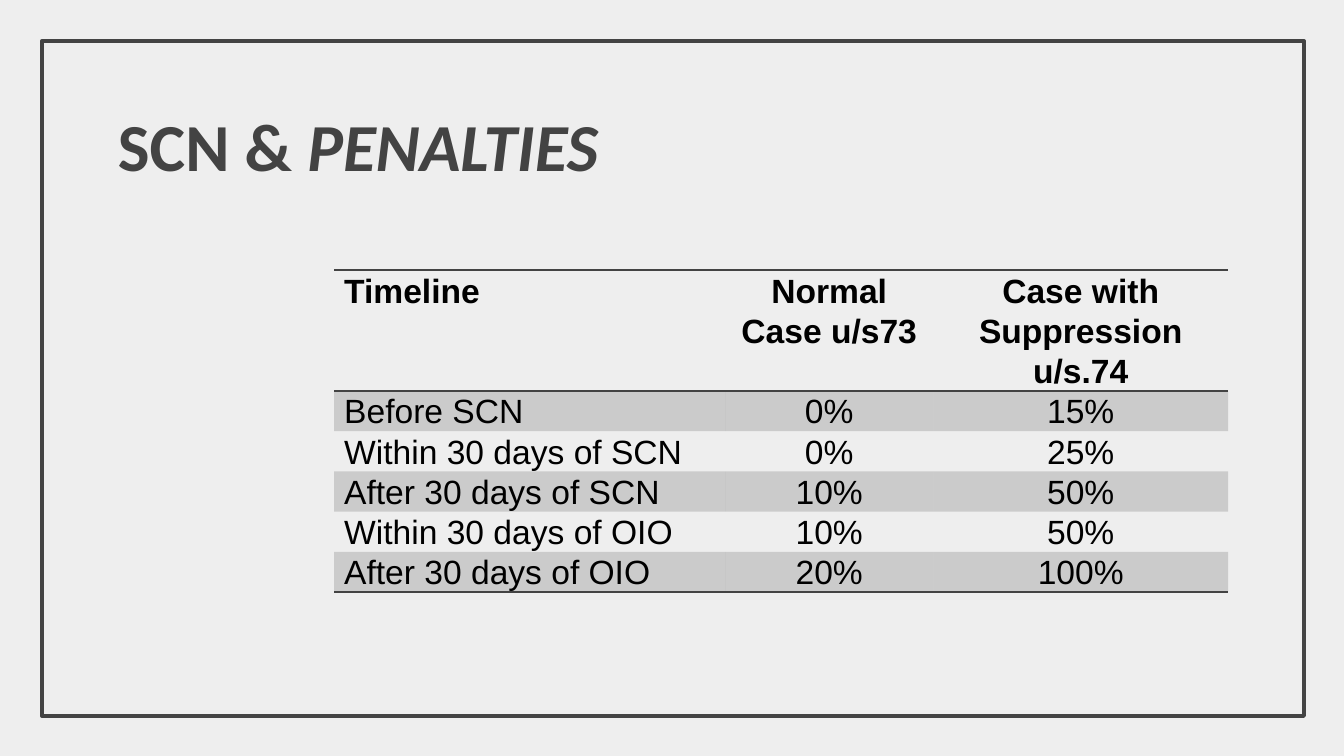
from dataclasses import dataclass

from lxml.etree import SubElement
from pptx import Presentation
from pptx.dml.color import RGBColor as RGB
from pptx.enum.shapes import MSO_SHAPE as Preset
from pptx.enum.text import MSO_ANCHOR as Anchor, PP_ALIGN as Align
from pptx.oxml.ns import qn
from pptx.util import Pt


@dataclass(frozen=True)
class Theme:
    paper: str = "EEEEEE"
    slate: str = "434343"
    ink: str = "000000"
    title_font: str = "Calibri"
    table_font: str = "Arial"
    title_size: float = 36
    table_size: float = 18


theme = Theme()


def write(paragraph, text, *, font, size, color, bold=False, italic=False, align=Align.LEFT):
    paragraph.alignment = align
    run = paragraph.add_run()
    run.text = text
    run.font.name = font
    run.font.size = Pt(size)
    run.font.bold = bold
    run.font.italic = italic
    run.font.color.rgb = RGB.from_string(color)


def rule(cell, side):
    line = SubElement(cell._tc.get_or_add_tcPr(), qn(f"a:{side}"), w=str(Pt(1)))
    fill = SubElement(line, qn("a:solidFill"))
    SubElement(fill, qn("a:srgbClr"), val=theme.slate)


deck = Presentation()
deck.slide_width, deck.slide_height = Pt(720), Pt(405)
slide = deck.slides.add_slide(deck.slide_layouts[5])
slide.background.fill.solid()
slide.background.fill.fore_color.rgb = RGB.from_string(theme.paper)

frame = slide.shapes.add_shape(Preset.RECTANGLE, Pt(22.5), Pt(22), Pt(676), Pt(361.5))
frame.shadow.inherit = False
frame.fill.background()
frame.line.color.rgb = RGB.from_string(theme.slate)
frame.line.width = Pt(2.25)

title = slide.shapes.title
title.left, title.top, title.width, title.height = Pt(56), Pt(48.5), Pt(608.5), Pt(58)
heading = title.text_frame
heading.margin_left = heading.margin_right = heading.margin_top = heading.margin_bottom = Pt(7.2)
heading.vertical_anchor = Anchor.MIDDLE
for words, slanted in (("SCN & ", False), ("PENALTIES", True)):
    write(heading.paragraphs[0], words, font=theme.title_font, size=theme.title_size,
          color=theme.slate, bold=True, italic=slanted)

penalties = [
    ("Timeline", "Normal Case u/s73", "Case with Suppression u/s.74"),
    ("Before SCN", "0%", "15%"),
    ("Within 30 days of SCN", "0%", "25%"),
    ("After 30 days of SCN", "10%", "50%"),
    ("Within 30 days of OIO", "10%", "50%"),
    ("After 30 days of OIO", "20%", "100%"),
]
column_widths = (209.5, 111.5, 158)
row_height = 21.5
header_height = 3 * row_height
last = len(penalties) - 1

grid = slide.shapes.add_table(len(penalties), len(column_widths), Pt(179), Pt(144.7),
                              Pt(sum(column_widths)), Pt(header_height + last * row_height)).table
grid._tbl.tblPr.find(qn("a:tableStyleId")).text = "{2D5ABB26-0587-4C30-8999-92F81FD0307C}"
grid.horz_banding = False
for column, width in zip(grid.columns, column_widths):
    column.width = Pt(width)

for r, entries in enumerate(penalties):
    grid.rows[r].height = Pt(row_height if r else header_height)
    for c, entry in enumerate(entries):
        cell = grid.cell(r, c)
        cell.margin_left = cell.margin_right = Pt(5.4)
        cell.margin_top = cell.margin_bottom = 0
        if r == 0:
            rule(cell, "lnT")
        if r in (0, last):
            rule(cell, "lnB")
        if r % 2:
            cell.fill.solid()
            cell.fill.fore_color.rgb = RGB.from_string(theme.slate)
            tint = cell._tc.tcPr.find(qn("a:solidFill")).find(qn("a:srgbClr"))
            SubElement(tint, qn("a:alpha"), val="20000")
        else:
            cell.fill.background()
        paragraph = cell.text_frame.paragraphs[0]
        paragraph.line_spacing = 1.07
        paragraph.space_after = Pt(8)
        write(paragraph, entry, font=theme.table_font, size=theme.table_size, color=theme.ink,
              bold=r == 0, align=Align.CENTER if c else Align.LEFT)

deck.save("out.pptx")
